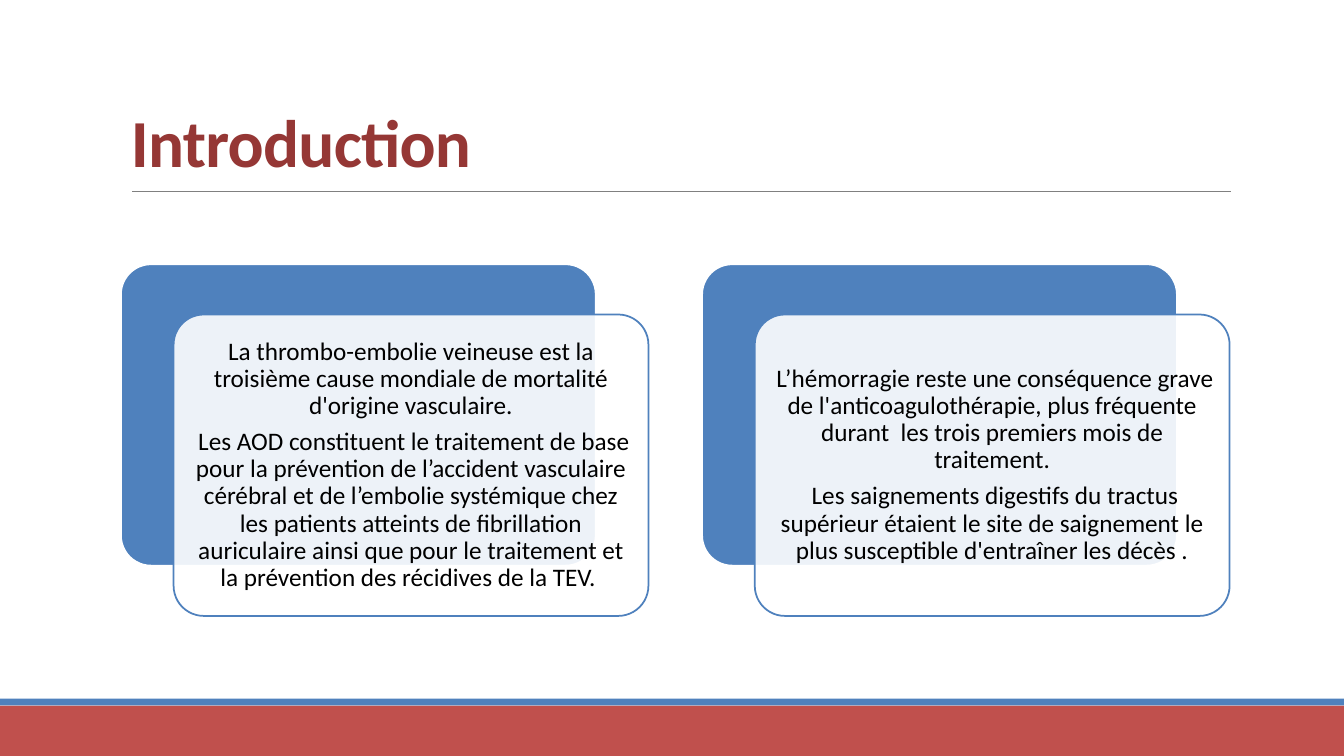
from pptx import Presentation
from pptx.dml.color import RGBColor
from pptx.enum.shapes import MSO_CONNECTOR as CONN, MSO_SHAPE as SHAPE
from pptx.enum.text import MSO_ANCHOR as ANCHOR, PP_ALIGN as ALIGN
from pptx.oxml.ns import qn
from pptx.util import Inches, Pt
from lxml.etree import SubElement

RED, BLUE, DARK_RED, GREY = "C0504D", "4F81BD", "953735", "808080"
WHITE, BLACK = "FFFFFF", "000000"

CARDS = [
    ["La thrombo-embolie veineuse est la troisième cause mondiale de mortalité d'origine vasculaire.",
     " Les AOD constituent le traitement de base pour la prévention de l’accident vasculaire cérébral "
     "et de l’embolie systémique chez les patients atteints de fibrillation auriculaire ainsi que pour "
     "le traitement et la prévention des récidives de la TEV. "],
    [" L’hémorragie reste une conséquence grave de l'anticoagulothérapie, plus fréquente durant  les "
     "trois premiers mois de traitement.",
     " Les saignements digestifs du tractus supérieur étaient le site de saignement le plus susceptible "
     "d'entraîner les décès ."],
]


def rgb(color):
    """Turn a hex string into a colour."""
    return RGBColor.from_string(color)


def write(tf, paragraphs, size=18, color=BLACK, bold=False, font="Calibri", align=ALIGN.LEFT,
          anchor=ANCHOR.MIDDLE, leading=0.9, after=0, inset=0.07, tracking=None):
    """Fill a text frame with formatted paragraphs."""
    tf.word_wrap = True
    tf.vertical_anchor = anchor
    tf.margin_left = tf.margin_right = tf.margin_top = tf.margin_bottom = Inches(inset)
    for i, text in enumerate(paragraphs):
        p = tf.add_paragraph() if i else tf.paragraphs[0]
        p.alignment, p.line_spacing, p.space_after = align, leading, Pt(after)
        r = p.add_run()
        r.text = text
        r.font.name, r.font.size, r.font.bold = font, Pt(size), bold
        r.font.color.rgb = rgb(color)
        if tracking:
            r.font._element.set("spc", str(int(tracking * 100)))


class Deck:
    """Hold the style and current slide; lengths are percent of the slide's size."""

    def __init__(self, width, height):
        """Start a presentation with one blank slide."""
        self.prs = Presentation()
        self.prs.slide_width, self.prs.slide_height = Inches(width), Inches(height)
        self.s = self.prs.slides.add_slide(self.prs.slide_layouts[6])

    def place(self, *lengths):
        """Convert alternating horizontal and vertical shares to lengths."""
        sides = (self.prs.slide_width, self.prs.slide_height) * 2
        return [int(side * share / 100) for side, share in zip(sides, lengths)]

    def box(self, x, y, w, h, fill, line=None, kind=SHAPE.RECTANGLE, alpha=None):
        """Draw a filled preset shape."""
        sp = self.s.shapes.add_shape(kind, *self.place(x, y, w, h))
        sp.shadow.inherit = False
        sp.fill.solid()
        sp.fill.fore_color.rgb = rgb(fill)
        if alpha:
            clr = sp.fill._xPr.find(qn("a:solidFill"))[0]
            SubElement(clr, qn("a:alpha"), val=str(alpha * 1000))
        if line:
            sp.line.color.rgb = rgb(line)
            sp.line.width = Pt(1.25)
        else:
            sp.line.fill.background()
        if kind == SHAPE.ROUNDED_RECTANGLE:
            sp.adjustments[0] = 0.1
        return sp

    def rule(self, x1, y1, x2, y2, color, width):
        """Draw a straight line."""
        ln = self.s.shapes.add_connector(CONN.STRAIGHT, *self.place(x1, y1, x2, y2))
        ln.line.color.rgb = rgb(color)
        ln.line.width = Pt(width)
        SubElement(ln._element.spPr, qn("a:effectLst"))

    def title(self, x, y, w, h, text):
        """Add the slide heading."""
        tb = self.s.shapes.add_textbox(*self.place(x, y, w, h))
        write(tb.text_frame, [text], size=48, color=DARK_RED, bold=True, anchor=ANCHOR.BOTTOM,
              leading=0.85, inset=0.1, tracking=-0.5)

    def card(self, x, y, w, h, paragraphs, dx=3.92, dy=6.65):
        """Draw a blue panel with an offset translucent text panel."""
        kind = SHAPE.ROUNDED_RECTANGLE
        self.box(x, y, w, h, BLUE, WHITE, kind)
        sp = self.box(x + dx, y + dy, w, h, WHITE, BLUE, kind, alpha=90)
        write(sp.text_frame, paragraphs, align=ALIGN.CENTER, after=6.3)


def main():
    """Build the introduction slide."""
    deck = Deck(13.33, 7.5)
    deck.box(0, 93.33, 100, 6.67, RED)
    deck.box(0, 92.4, 100, 0.9, BLUE)
    deck.rule(9.83, 25.33, 91.6, 25.33, GREY, 0.5)
    deck.title(9, 4.13, 82.5, 21.2, "Introduction")
    for i, paragraphs in enumerate(CARDS):
        deck.card(9 + 43.24 * i, 34.95, 35.33, 39.87, paragraphs)
    deck.prs.save("out.pptx")


if __name__ == "__main__":
    main()
